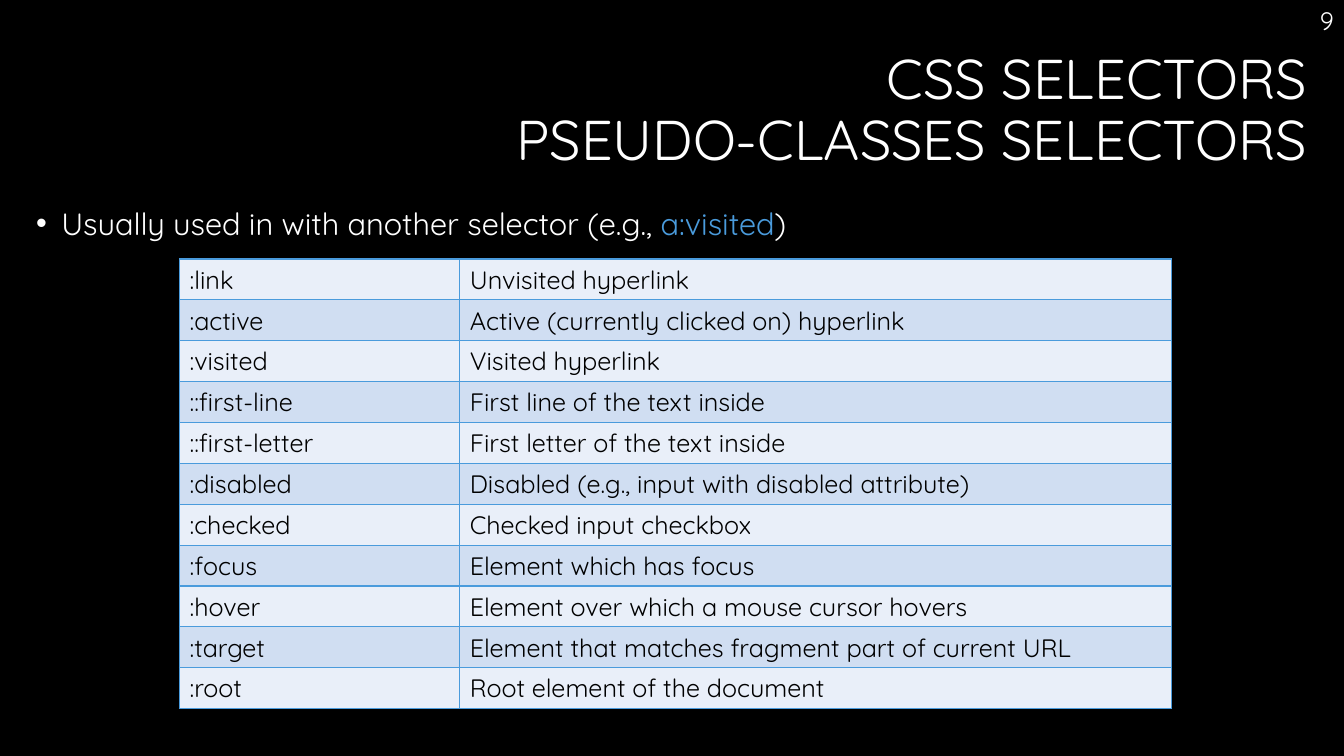
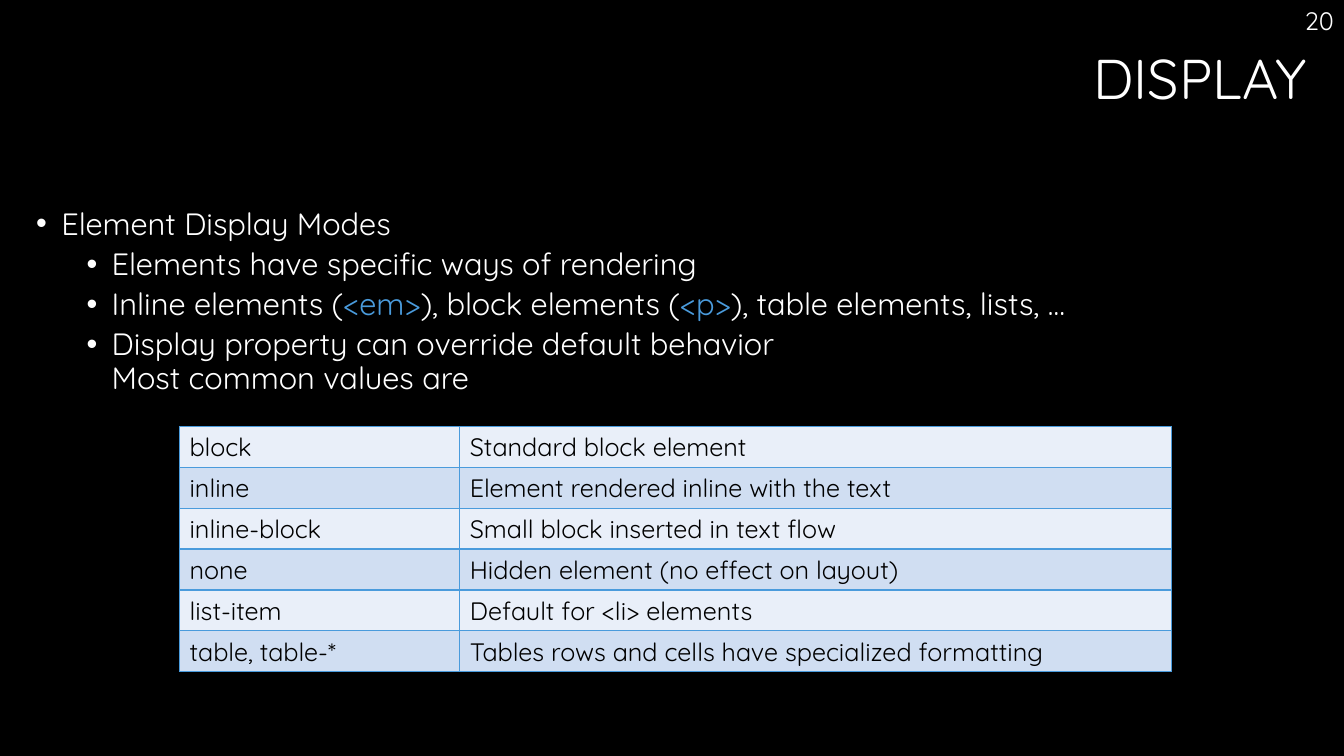
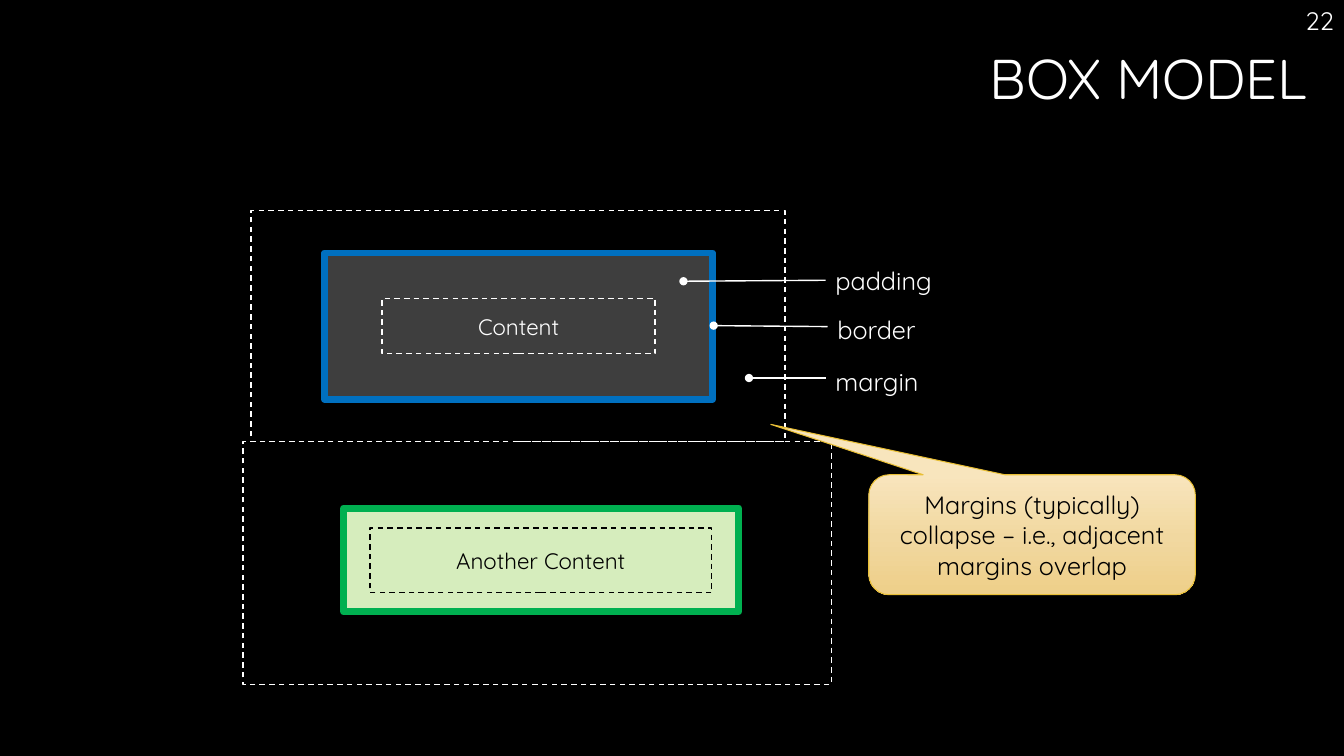
import copy
import dataclasses

import lxml.etree
import pptx
import pptx.dml.color
import pptx.enum.dml
import pptx.enum.shapes
import pptx.enum.text
import pptx.oxml.ns
import pptx.util

Pt = pptx.util.Pt
qn = pptx.oxml.ns.qn
SHAPE = pptx.enum.shapes.MSO_SHAPE
ALIGN = pptx.enum.text.PP_ALIGN
ANCHOR = pptx.enum.text.MSO_ANCHOR


@dataclasses.dataclass(frozen=True)
class Theme:
    font: str = "Quicksand"
    background: str = "000000"
    light: str = "FFFFFF"
    dark: str = "000000"
    accent: str = "4A9BDC"
    row_fills: tuple = ("E9EFF9", "D0DEF2")
    callout_stops: tuple = ((0, "F8E5BD"), (0.52, "F1D8A0"), (1, "EECF89"))
    callout_line: str = "E9BF35"
    title_size: int = 40
    body_size: int = 22
    text_size: int = 18
    box_size: int = 16
    thin: float = 1
    thick: float = 5


THEME = Theme()


def rgb(value):
    return pptx.dml.color.RGBColor.from_string(value)


def write_text(paragraph, text, size=THEME.text_size, color=THEME.light,
               align=ALIGN.LEFT, spacing=None, before=None):
    """Fill a paragraph; parts between backticks take the accent colour."""
    paragraph.alignment = align
    paragraph.line_spacing = spacing
    if before is not None:
        paragraph.space_before = Pt(before)
    for part_index, part in enumerate(text.split("`")):
        for line_index, line in enumerate(part.split("\n")):
            if line_index:
                paragraph.add_line_break()
            if not line:
                continue
            run = paragraph.add_run()
            run.text = line
            run.font.name = THEME.font
            run.font.size = Pt(size)
            run.font.color.rgb = rgb(THEME.accent if part_index % 2 else color)


def add_solid_fill(parent, color):
    fill = lxml.etree.SubElement(parent, qn("a:solidFill"))
    lxml.etree.SubElement(fill, qn("a:srgbClr"), val=color)


def add_bullet(paragraph, left, hanging):
    properties = paragraph._p.get_or_add_pPr()
    properties.set("marL", str(Pt(left)))
    properties.set("indent", str(-Pt(hanging)))
    bullet_color = lxml.etree.SubElement(properties, qn("a:buClr"))
    lxml.etree.SubElement(bullet_color, qn("a:srgbClr"), val=THEME.light)
    lxml.etree.SubElement(properties, qn("a:buFont"), typeface="Arial")
    lxml.etree.SubElement(properties, qn("a:buChar"), char="•")


def add_borders(cell):
    properties = cell._tc.get_or_add_tcPr()
    for index, side in enumerate("LRTB"):
        border = lxml.etree.Element(qn(f"a:ln{side}"), w=str(Pt(THEME.thin)))
        add_solid_fill(border, THEME.accent)
        properties.insert(index, border)


class Deck:
    def __init__(self):
        self.presentation = pptx.Presentation()
        self.presentation.slide_width = Pt(960)
        self.presentation.slide_height = Pt(540)
        background = self.presentation.slide_master.background.fill
        background.solid()
        background.fore_color.rgb = rgb(THEME.background)
        self.slide = None

    def start_slide(self, title, number):
        layout = self.presentation.slide_layouts[5]
        self.slide = self.presentation.slides.add_slide(layout)
        shape = self.slide.shapes.title
        shape.left, shape.top = Pt(18.7), Pt(33.1)
        shape.width, shape.height = Pt(922.3), Pt(101.5)
        frame = shape.text_frame
        frame.auto_size = pptx.enum.text.MSO_AUTO_SIZE.NONE
        frame.vertical_anchor = ANCHOR.TOP
        write_text(frame.paragraphs[0], title, size=THEME.title_size,
                   align=ALIGN.RIGHT, spacing=0.9)
        self.text_box(752.4, 0, 207.4, 29, number, align=ALIGN.RIGHT)

    def text_box(self, left, top, width, height, text="", **text_format):
        shape = self.slide.shapes.add_textbox(
            Pt(left), Pt(top), Pt(width), Pt(height))
        frame = shape.text_frame
        frame.word_wrap = True
        if text:
            write_text(frame.paragraphs[0], text, **text_format)
        return frame

    def bullets(self, height, items):
        """Add a bullet list from (level, text) pairs."""
        frame = self.text_box(18.7, 145.4, 922.3, height)
        for index, (level, text) in enumerate(items):
            paragraph = frame.add_paragraph() if index else frame.paragraphs[0]
            paragraph.level = level
            write_text(paragraph, text, size=THEME.body_size, spacing=0.9,
                       before=5 if level else 10)
            add_bullet(paragraph, 18 + 36 * level, 18)

    def table(self, top, rows):
        widths, row_height = (200.2, 508.3), 29.2
        table = self.slide.shapes.add_table(
            len(rows), len(widths), Pt(128.2), Pt(top),
            Pt(sum(widths)), Pt(row_height * len(rows))).table
        table.first_row = table.horz_banding = False
        for column, width in zip(table.columns, widths):
            column.width = Pt(width)
        for row_index, texts in enumerate(rows):
            table.rows[row_index].height = Pt(row_height)
            for column_index, text in enumerate(texts):
                cell = table.cell(row_index, column_index)
                cell.fill.solid()
                cell.fill.fore_color.rgb = rgb(THEME.row_fills[row_index % 2])
                add_borders(cell)
                write_text(cell.text_frame.paragraphs[0], text,
                           color=THEME.dark)

    def box(self, bounds, line, weight=THEME.thin, fill=None, dashed=False,
            text="", kind=SHAPE.RECTANGLE, **text_format):
        shape = self.slide.shapes.add_shape(kind, *map(Pt, bounds))
        shape.shadow.inherit = False
        shape.line.color.rgb = rgb(line)
        shape.line.width = Pt(weight)
        if dashed:
            shape.line.dash_style = pptx.enum.dml.MSO_LINE.DASH
        if fill:
            shape.fill.solid()
            shape.fill.fore_color.rgb = rgb(fill)
        else:
            shape.fill.background()
        if text:
            shape.text_frame.word_wrap = True
            shape.text_frame.vertical_anchor = ANCHOR.MIDDLE
            write_text(shape.text_frame.paragraphs[0], text,
                       align=ALIGN.CENTER, **text_format)
        return shape

    def box_model(self, margin, border, content, line, fill, color, text):
        """Draw nested margin, border and content boxes."""
        self.box(margin, THEME.light, dashed=True)
        self.box(border, line, weight=THEME.thick, fill=fill)
        self.box(content, color, dashed=True, text=text, color=color,
                 size=THEME.box_size)

    def pointer(self, start, end, label, label_top):
        """Draw a line with a dot at its start and a label at its end."""
        connector = self.slide.shapes.add_connector(
            pptx.enum.shapes.MSO_CONNECTOR.STRAIGHT,
            *map(Pt, (*start, *end)))
        connector.line.color.rgb = rgb(THEME.light)
        connector.line.width = Pt(THEME.thin)
        lxml.etree.SubElement(connector.line._get_or_add_ln(),
                              qn("a:headEnd"), type="oval")
        lxml.etree.SubElement(connector.element.spPr, qn("a:effectLst"))
        self.text_box(end[0], label_top, 87, 29, label)

    def callout(self, bounds, adjustments, text):
        shape = self.box(bounds, THEME.callout_line, weight=0.75, text=text,
                         kind=SHAPE.ROUNDED_RECTANGULAR_CALLOUT,
                         color=THEME.dark)
        for index, value in enumerate(adjustments):
            shape.adjustments[index] = value
        shape.fill.gradient()
        shape.fill.gradient_angle = 270
        stop_list = shape.element.spPr.find(".//" + qn("a:gsLst"))
        stop_list.insert(1, copy.deepcopy(stop_list[0]))
        for stop, (position, color) in zip(shape.fill.gradient_stops,
                                           THEME.callout_stops):
            stop.position = position
            stop.color.rgb = rgb(color)


def main():
    deck = Deck()

    deck.start_slide("CSS SELECTORS\nPSEUDO-CLASSES SELECTORS", "9")
    deck.bullets(39.6, [
        (0, "Usually used in with another selector (e.g., `a:visited`)")])
    deck.table(185, [
        (":link", "Unvisited hyperlink"),
        (":active", "Active (currently clicked on) hyperlink"),
        (":visited", "Visited hyperlink"),
        ("::first-line", "First line of the text inside"),
        ("::first-letter", "First letter of the text inside"),
        (":disabled", "Disabled (e.g., input with disabled attribute)"),
        (":checked", "Checked input checkbox"),
        (":focus", "Element which has focus"),
        (":hover", "Element over which a mouse cursor hovers"),
        (":target", "Element that matches fragment part of current URL"),
        (":root", "Root element of the document"),
    ])

    deck.start_slide("DISPLAY", "20")
    deck.bullets(147.6, [
        (0, "Element Display Modes"),
        (1, "Elements have specific ways of rendering"),
        (1, "Inline elements (`<em>`), block elements (`<p>`), "
            "table elements, lists, …"),
        (1, "Display property can override default behavior\n"
            "Most common values are"),
    ])
    deck.table(304.6, [
        ("block", "Standard block element"),
        ("inline", "Element rendered inline with the text"),
        ("inline-block", "Small block inserted in text flow"),
        ("none", "Hidden element (no effect on layout)"),
        ("list-item", "Default for <li> elements"),
        ("table, table-*",
         "Tables rows and cells have specialized formatting"),
    ])

    deck.start_slide("BOX MODEL", "22")
    deck.box_model(margin=(179.3, 150.5, 381.6, 164.9),
                   border=(231.8, 180.7, 277.2, 104.4),
                   content=(272.9, 213.1, 195.1, 39.6),
                   line="0070C0", fill="3E3E3E", color=THEME.light,
                   text="Content")
    deck.pointer((488.2, 200.9), (589.7, 200.2), "padding", 185.8)
    deck.pointer((509.8, 232.6), (591.1, 233.3), "border", 221)
    deck.pointer((535, 270), (589.7, 270), "margin", 257.8)
    deck.box_model(margin=(173.5, 315.4, 420.5, 173.5),
                   border=(245.5, 362.9, 282.2, 74.2),
                   content=(264.2, 377.3, 244.1, 46.1),
                   line="00B050", fill="D6EDBD", color=THEME.dark,
                   text="Another Content")
    deck.callout((620.6, 339.1, 233.3, 85.7), (-0.8, -0.92, 0.17),
                 "Margins (typically) collapse – i.e., "
                 "adjacent margins overlap")

    deck.presentation.save("out.pptx")


if __name__ == "__main__":
    main()
